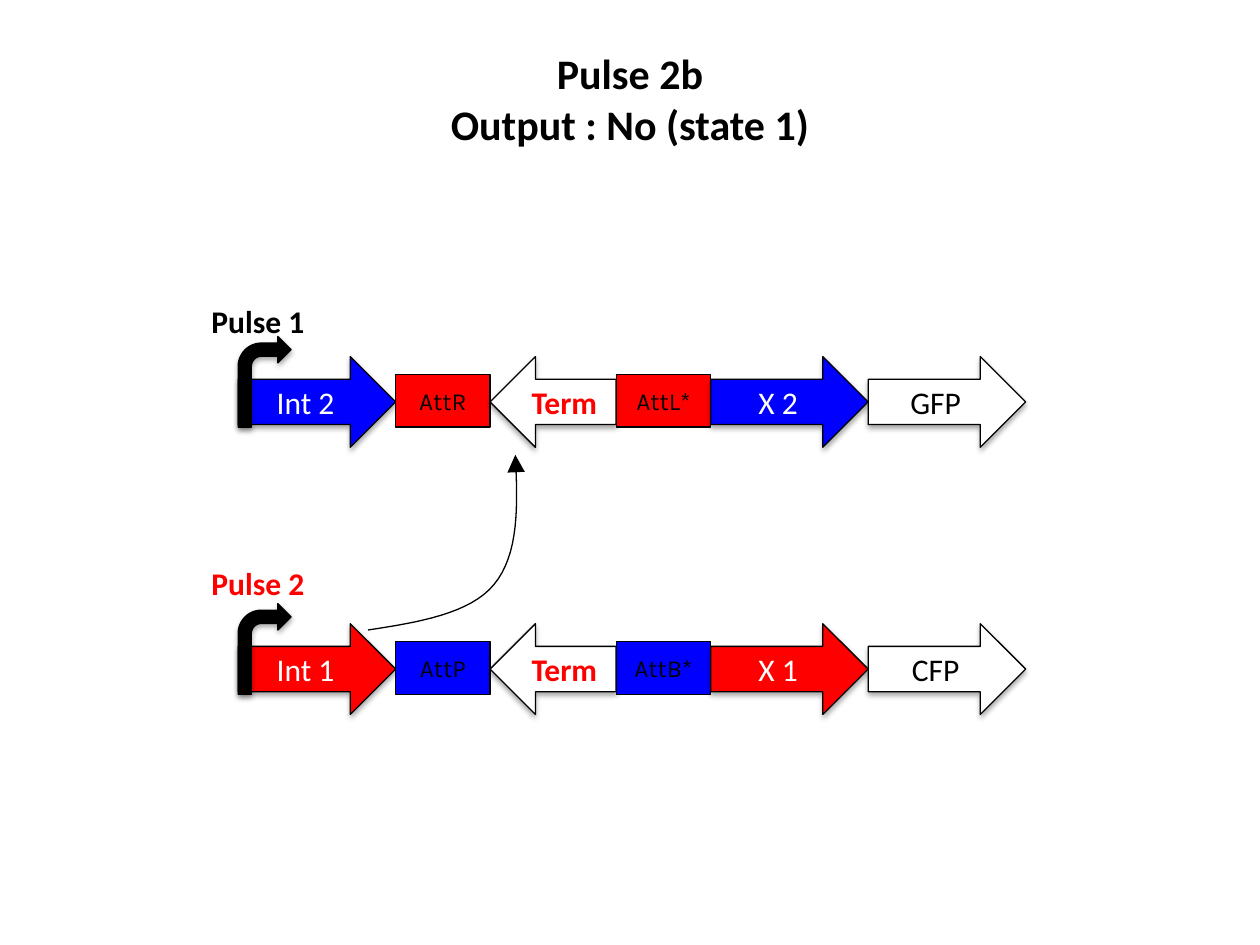
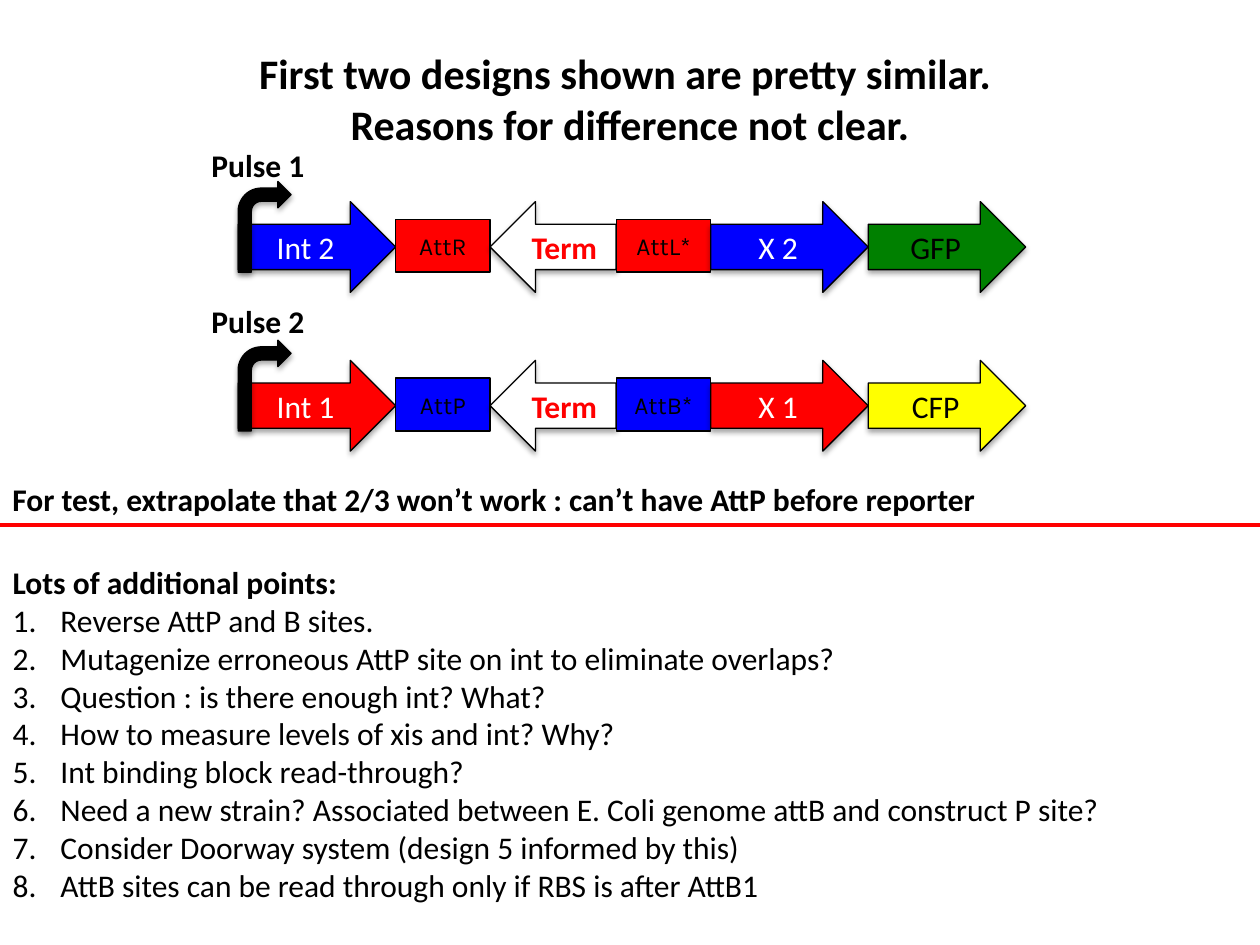
from lxml import etree
from pptx import Presentation
from pptx import util as u
from pptx.dml.color import RGBColor
from pptx.enum import shapes, text
from pptx.oxml.ns import qn

COLORS = {"black": "000000", "white": "FFFFFF", "red": "FF0000",
          "blue": "0000FF", "green": "008000", "yellow": "FFFF00"}
WIDTH, HEIGHT = 10, 7.5
LEFT = 1.89                      # left edge of every construct
GENE_W, TERM_W, SITE_W = 1.25, 1, 0.75
GENE_H, SITE_H, PROMOTER_W = 0.72, 0.42, 0.42
TITLE_ONLY, TITLE_AND_BODY = 5, 1

POINTS = [
    "Reverse AttP and B sites.",
    "Mutagenize erroneous AttP site on int to eliminate overlaps?",
    "Question : is there enough int? What?",
    "How to measure levels of xis and int? Why?",
    "Int binding block read-through?",
    "Need a new strain? Associated between E. Coli genome attB and construct P site?",
    "Consider Doorway system (design 5 informed by this)",
    "AttB sites can be read through only if RBS is after AttB1",
]


def rgb(name):
    return RGBColor.from_string(COLORS[name])


def child(parent, tag, **attributes):
    return etree.SubElement(parent, qn(tag), attributes)


def place(box, left, top, width, height):
    box.left, box.top = u.Inches(left), u.Inches(top)
    box.width, box.height = u.Inches(width), u.Inches(height)


def write(box, lines, size=18, font="Calibri", color="black", bold=False,
          align=text.PP_ALIGN.LEFT, anchor=text.MSO_ANCHOR.TOP, wrap=True):
    """Fill a box with one paragraph per line and return the paragraphs."""
    frame = box.text_frame
    frame.word_wrap = wrap
    frame.auto_size = text.MSO_AUTO_SIZE.NONE
    frame.vertical_anchor = anchor
    for index, line in enumerate(lines):
        para = frame.add_paragraph() if index else frame.paragraphs[0]
        para.alignment = align
        para.space_before = u.Pt(0)
        span = para.add_run()
        span.text = line
        span.font.size, span.font.name, span.font.bold = u.Pt(size), font, bold
        span.font.color.rgb = rgb(color)
    return frame.paragraphs


def add_page(deck, layout, title_lines):
    page = deck.slides.add_slide(deck.slide_layouts[layout])
    place(page.shapes.title, 0, 0.33, WIDTH, 0.91)
    write(page.shapes.title, title_lines, size=24, bold=True,
          align=text.PP_ALIGN.CENTER)
    return page


def add_label(page, line, left, top, width, **style):
    box = page.shapes.add_textbox(0, 0, 0, 0)
    place(box, left, top, width, 0.4)
    write(box, [line], bold=True, **style)


def add_part(page, kind, left, top, width, height, fill, shadow=True):
    part = page.shapes.add_shape(kind, 0, 0, 0, 0)
    place(part, left, top, width, height)
    part.fill.solid()
    part.fill.fore_color.rgb = rgb(fill)
    part.line.color.rgb = rgb("black")
    part.line.width = u.Pt(0.75)
    part.shadow.inherit = False
    if shadow:
        effects = part._element.spPr.find(qn("a:effectLst"))
        outer = child(effects, "a:outerShdw", blurRad="40000", dist="23000",
                      dir="5400000", rotWithShape="0")
        tint = child(outer, "a:srgbClr", val=COLORS["black"])
        child(tint, "a:alpha", val="35000")
    return part


def add_construct(page, top, parts, pulse, pulse_top, pulse_color="black"):
    """Draw one row of (kind, name, fill, text colour), its promoter and label."""
    site_top = top + 0.14
    left = LEFT
    for kind, name, fill, color in parts:
        style = dict(color=color, align=text.PP_ALIGN.CENTER,
                     anchor=text.MSO_ANCHOR.MIDDLE)
        if kind == "site":
            width = SITE_W
            part = add_part(page, shapes.MSO_SHAPE.RECTANGLE, left, site_top,
                            width, SITE_H, fill, shadow=False)
            write(part, [name], size=14, font="Karla", wrap=False, **style)
        else:
            width = TERM_W if kind == "term" else GENE_W
            part = add_part(page, shapes.MSO_SHAPE.RIGHT_ARROW, left, top,
                            width, GENE_H, fill)
            if kind == "term":
                part._element.spPr.find(qn("a:xfrm")).set("flipH", "1")
            write(part, [name], bold=kind == "term", **style)
        left += width
    add_part(page, shapes.MSO_SHAPE.BENT_ARROW, LEFT, site_top + SITE_H - GENE_H,
             PROMOTER_W, GENE_H, "black")
    add_label(page, pulse, 1.58, pulse_top, 0.97, color=pulse_color, wrap=False)


def construct_parts(number, gene_fill, site_fill, sites, reporter, reporter_fill):
    return [("gene", f"Int {number}", gene_fill, "white"),
            ("site", sites[0], site_fill, "black"),
            ("term", "Term", "white", "red"),
            ("site", sites[1], site_fill, "black"),
            ("gene", f"X {number}", gene_fill, "white"),
            ("gene", reporter, reporter_fill, "black")]


def add_constructs(page, tops, pulse_tops, reporter_fills, second_color="black"):
    rows = [(2, "blue", "red", ("AttR", "AttL*"), "GFP"),
            (1, "red", "blue", ("AttP", "AttB*"), "CFP")]
    pulses = [("Pulse 1", "black"), ("Pulse 2", second_color)]
    for row, top, pulse_top, fill, (pulse, color) in zip(
            rows, tops, pulse_tops, reporter_fills, pulses):
        add_construct(page, top, construct_parts(*row, fill), pulse, pulse_top, color)


def bezier(start, first, second, end, steps=16):
    """Points along a cubic curve, without its start."""
    for step in range(1, steps + 1):
        t = step / steps
        weights = ((1 - t) ** 3, 3 * t * (1 - t) ** 2, 3 * t * t * (1 - t), t ** 3)
        yield tuple(sum(w * point[axis] for w, point in
                        zip(weights, (start, first, second, end)))
                    for axis in (0, 1))


def add_curved_arrow(page, start, *segments):
    """Draw joined cubic curves; the builder rounds points, so they go in as EMU."""
    points = [start]
    for segment in segments:
        points.extend(bezier(points[-1], *segment))
    first, *rest = [(u.Inches(x), u.Inches(y)) for x, y in points]
    builder = page.shapes.build_freeform(*first)
    builder.add_line_segments(rest, close=False)
    curve = builder.convert_to_shape()
    curve.fill.background()
    curve.line.color.rgb = rgb("black")
    curve.line.width = u.Pt(0.75)
    curve.shadow.inherit = False
    outline = curve._element.spPr.find(qn("a:ln"))
    child(outline, "a:tailEnd", type="triangle", w="lg", len="lg")


def add_divider(page, top):
    line = page.shapes.add_connector(
        shapes.MSO_CONNECTOR.STRAIGHT, 0, u.Inches(top), u.Inches(WIDTH), u.Inches(top))
    line.line.color.rgb = rgb("red")
    line.line.width = u.Pt(2.25)
    child(line._element.spPr, "a:effectLst")


def add_numbered_list(page, heading, points, top):
    body = page.placeholders[1]
    place(body, 0, top, WIDTH, HEIGHT - top)
    paras = write(body, [heading, *points])
    paras[0].runs[0].font.bold = True
    for index, para in enumerate(paras):
        indent = u.Inches(0.38) if index else 0
        properties = para._p.get_or_add_pPr()
        properties.set("marL", str(indent))
        properties.set("indent", str(-indent))
        if index:
            child(properties, "a:buFont", typeface="+mj-lt")
            child(properties, "a:buAutoNum", type="arabicPeriod")
        else:
            child(properties, "a:buNone")


def main():
    deck = Presentation()
    deck.slide_width, deck.slide_height = u.Inches(WIDTH), u.Inches(HEIGHT)

    page = add_page(deck, TITLE_ONLY, ["Pulse 2b", "Output : No (state 1)"])
    add_constructs(page, (2.83, 4.95), (2.35, 4.43), ("white", "white"), "red")
    add_curved_arrow(page, (2.92, 5),
                     ((3.32, 4.94), (3.73, 4.87), (3.92, 4.64)),
                     ((4.12, 4.4), (4.11, 4.01), (4.09, 3.61)))

    page = add_page(deck, TITLE_AND_BODY,
                    ["First two designs shown are pretty similar. ",
                     "Reasons for difference not clear."])
    add_divider(page, 4.17)
    add_label(page, "For test, extrapolate that 2/3 won’t work : "
              "can’t have AttP before reporter", 0, 3.76, WIDTH)
    add_numbered_list(page, "Lots of additional points:", POINTS, 4.42)
    add_constructs(page, (1.6, 2.86), (1.11, 2.35), ("green", "yellow"))

    deck.save("out.pptx")


if __name__ == "__main__":
    main()
